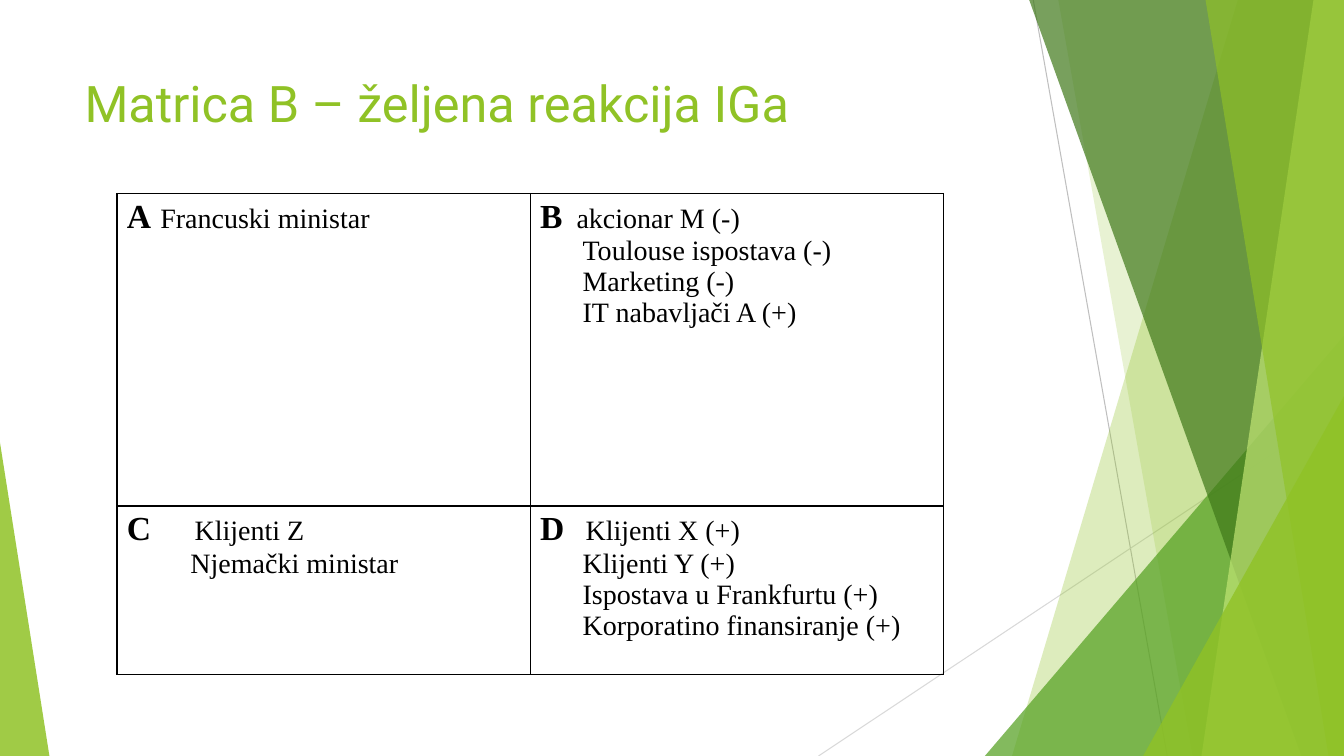
from dataclasses import dataclass

from lxml.etree import SubElement
from pptx import Presentation
from pptx.dml.color import RGBColor
from pptx.enum.shapes import MSO_CONNECTOR, MSO_SHAPE
from pptx.enum.text import MSO_ANCHOR
from pptx.oxml.ns import qn
from pptx.util import Inches, Pt

WIDTH, HEIGHT = Inches(13.333), Inches(7.5)


@dataclass(frozen=True)
class Theme:
    green: str = "90C226"
    leaf: str = "54A021"
    forest: str = "3F7819"
    lime: str = "C0E474"
    gray: str = "BFBFBF"
    pale_gray: str = "D9D9D9"
    black: str = "000000"
    title_font: str = "Roboto"
    table_font: str = "Times New Roman"
    title_size: int = 36
    letter_size: int = 24
    entry_size: int = 20


THEME = Theme()

# Line ends, in percent of the slide: x1, y1, x2, y2, colour
LINES = [
    (76.88, 0, 86.85, 100, THEME.gray),
    (100, 53.73, 60.9, 100, THEME.pale_gray),
]
# Bands reach the right edge: top x, bottom x, colour, opacity
BACK_BANDS = [
    (92.1, 75.3, THEME.green, 30),
    (78.75, 88.73, THEME.green, 20),
]
FRONT_BANDS = [
    (76.58, 96.83, THEME.forest, 70),
    (97.73, 89.4, THEME.lime, 70),
    (89.7, 98.85, THEME.green, 65),
]
# Triangles stand on the bottom edge: left, right, top, apex, colour, opacity
BACK_TRIANGLES = [(73.28, 100, 44.4, 1, THEME.leaf, 72)]
FRONT_TRIANGLES = [
    (85.05, 100, 52.4, 1, THEME.green, 80),
    (0, 3.68, 58.53, 0, THEME.green, 85),
]

# Quadrants: letter, first entry offset, further entry indent (inches), entries
MATRIX = [
    [
        ("A", 0.33, 0, ["Francuski ministar"]),
        ("B", 0.36, 0.42, ["akcionar M (-)", "Toulouse ispostava (-)",
                           "Marketing (-)", "IT nabavljači A (+)"]),
    ],
    [
        ("C", 0.67, 0.63, ["Klijenti Z", "Njemački ministar"]),
        ("D", 0.45, 0.42, ["Klijenti X (+)", "Klijenti Y (+)",
                           "Ispostava u Frankfurtu (+)",
                           "Korporatino finansiranje (+)"]),
    ],
]
COLUMN_WIDTH = 30.75
ROW_HEIGHTS = [41.33, 22.27]


def across(percent):
    return round(WIDTH * percent / 100)


def down(percent):
    return round(HEIGHT * percent / 100)


def style_run(run, font, size, color, bold=False):
    run.font.name, run.font.size, run.font.bold = font, Pt(size), bold
    run.font.color.rgb = RGBColor.from_string(color)


def paint(shape, color, opacity):
    shape.shadow.inherit = False
    shape.line.fill.background()
    shape.fill.solid()
    shape.fill.fore_color.rgb = RGBColor.from_string(color)
    color_element = shape.element.spPr.find(f"{qn('a:solidFill')}/{qn('a:srgbClr')}")
    SubElement(color_element, qn("a:alpha"), val=str(opacity * 1000))


def add_line(slide, x1, y1, x2, y2, color):
    line = slide.shapes.add_connector(
        MSO_CONNECTOR.STRAIGHT, across(x1), down(y1), across(x2), down(y2))
    line.line.color.rgb = RGBColor.from_string(color)
    line.line.width = Pt(0.75)
    SubElement(line.element.spPr, qn("a:effectLst"))


def add_band(slide, top_x, bottom_x, color, opacity):
    builder = slide.shapes.build_freeform(across(top_x), 0)
    builder.add_line_segments(
        [(WIDTH, 0), (WIDTH, HEIGHT), (across(bottom_x), HEIGHT)], close=True)
    paint(builder.convert_to_shape(), color, opacity)


def add_triangle(slide, left, right, top, apex, color, opacity):
    triangle = slide.shapes.add_shape(
        MSO_SHAPE.ISOSCELES_TRIANGLE, across(left), down(top),
        across(right - left), down(100 - top))
    triangle.adjustments[0] = apex
    paint(triangle, color, opacity)


def add_title(slide, text):
    box = slide.shapes.add_textbox(across(5.55), down(8.93), across(70.5), down(19.2))
    frame = box.text_frame
    frame.word_wrap = True
    frame.vertical_anchor = MSO_ANCHOR.TOP
    frame.text = text
    style_run(frame.paragraphs[0].runs[0], THEME.title_font,
              THEME.title_size, THEME.green)


def add_borders(cell):
    properties = cell._tc.get_or_add_tcPr()
    for side in ("lnL", "lnR", "lnT", "lnB"):
        border = SubElement(properties, qn(f"a:{side}"), w=str(Pt(1)))
        fill = SubElement(border, qn("a:solidFill"))
        SubElement(fill, qn("a:srgbClr"), val=THEME.black)


def fill_quadrant(cell, letter, offset, indent, entries):
    add_borders(cell)
    cell.fill.background()
    cell.text_frame.text = "\n".join([letter, *entries[1:]])
    heading, *others = cell.text_frame.paragraphs
    style_run(heading.runs[0], THEME.table_font, THEME.letter_size,
              THEME.black, bold=True)

    # The first entry follows the letter at a tab stop
    tabs = SubElement(heading._p.get_or_add_pPr(), qn("a:tabLst"))
    SubElement(tabs, qn("a:tab"), pos=str(Inches(offset)), algn="l")
    first_entry = heading.add_run()
    first_entry.text = "\t" + entries[0]

    for paragraph in others:
        paragraph._p.get_or_add_pPr().set("marL", str(Inches(indent)))
    for run in [first_entry, *(paragraph.runs[0] for paragraph in others)]:
        style_run(run, THEME.table_font, THEME.entry_size, THEME.black)


def add_matrix(slide):
    table = slide.shapes.add_table(
        len(MATRIX), len(MATRIX[0]), across(8.7), down(25.6),
        across(COLUMN_WIDTH * 2), down(sum(ROW_HEIGHTS))).table
    table.first_row = table.horz_banding = False
    for column in table.columns:
        column.width = across(COLUMN_WIDTH)
    for index, (height, quadrants) in enumerate(zip(ROW_HEIGHTS, MATRIX)):
        table.rows[index].height = down(height)
        for cell, quadrant in zip(table.rows[index].cells, quadrants):
            fill_quadrant(cell, *quadrant)


def main():
    presentation = Presentation()
    presentation.slide_width, presentation.slide_height = WIDTH, HEIGHT
    slide = presentation.slides.add_slide(presentation.slide_layouts[6])

    # Decoration, from back to front
    for add, items in [
        (add_line, LINES),
        (add_band, BACK_BANDS),
        (add_triangle, BACK_TRIANGLES),
        (add_band, FRONT_BANDS),
        (add_triangle, FRONT_TRIANGLES),
    ]:
        for item in items:
            add(slide, *item)

    # Content
    add_matrix(slide)
    add_title(slide, "Matrica B – željena reakcija IGa")
    presentation.save("out.pptx")


if __name__ == "__main__":
    main()
